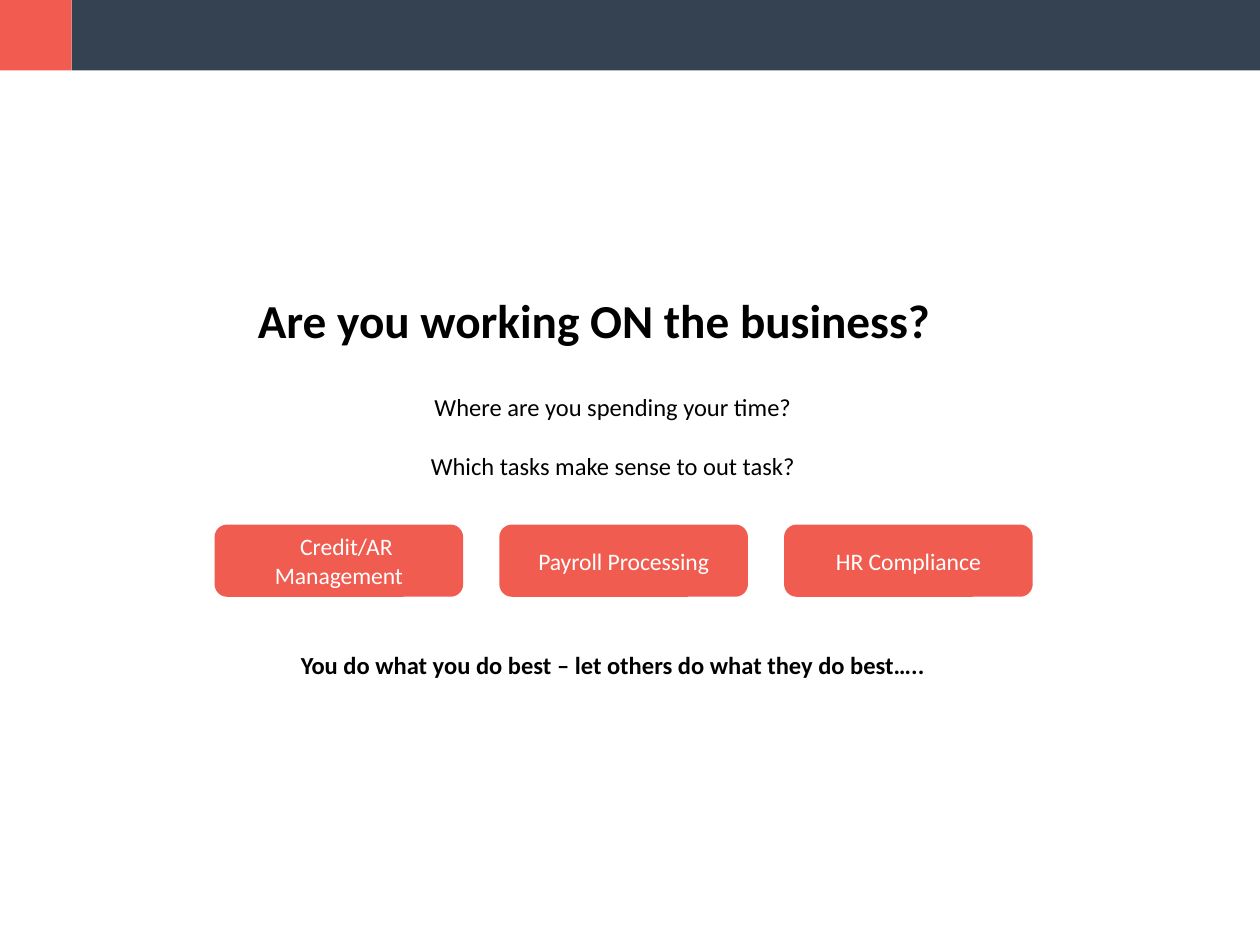
from dataclasses import dataclass

from pptx import Presentation
from pptx.dml.color import RGBColor
from pptx.enum.shapes import MSO_SHAPE
from pptx.enum.text import MSO_ANCHOR, PP_ALIGN
from pptx.shapes.autoshape import Shape
from pptx.slide import Slide
from pptx.text.text import TextFrame
from pptx.util import Inches, Pt


@dataclass(frozen=True)
class Theme:
    font: str = "Calibri"
    accent: RGBColor = RGBColor(0xF1, 0x5B, 0x50)
    button: RGBColor = RGBColor(0xF1, 0x5C, 0x50)
    band: RGBColor = RGBColor(0x35, 0x42, 0x52)
    dark: RGBColor = RGBColor(0, 0, 0)
    light: RGBColor = RGBColor(0xFF, 0xFF, 0xFF)
    title_size: float = 27
    body_size: float = 14
    button_size: float = 13.5


@dataclass(frozen=True)
class Box:
    left: float
    top: float
    width: float
    height: float


@dataclass(frozen=True)
class Line:
    text: str
    size: float
    color: RGBColor
    bold: bool = False
    before: float = 0
    spacing: float = 1.0
    indent: float = 0


THEME = Theme()
BAND_HEIGHT = 0.56
ACCENT_WIDTH = 0.57
BUTTON = Box(1.71, 4.17, 1.96, 0.56)
BUTTON_PITCH = 2.26


def add_lines(tf: TextFrame, lines: list[Line]) -> None:
    tf.word_wrap = True
    for i, line in enumerate(lines):
        p = tf.add_paragraph() if i else tf.paragraphs[0]
        p.alignment = PP_ALIGN.CENTER
        p.line_spacing = line.spacing
        if i:
            p.space_before = Pt(line.before)
        if line.indent:
            pPr = p._p.get_or_add_pPr()
            pPr.set("marL", "0")
            pPr.set("indent", str(Inches(line.indent)))
        r = p.add_run()
        r.text = line.text
        r.font.name = THEME.font
        r.font.size = Pt(line.size)
        r.font.bold = line.bold
        r.font.color.rgb = line.color


def add_text(s: Slide, box: Box, lines: list[Line]) -> TextFrame:
    sp = s.shapes.add_textbox(Inches(box.left), Inches(box.top),
                              Inches(box.width), Inches(box.height))
    add_lines(sp.text_frame, lines)
    return sp.text_frame


def add_block(s: Slide, kind: MSO_SHAPE, box: Box, color: RGBColor) -> Shape:
    """Add a plain filled shape without outline or shadow."""
    sp = s.shapes.add_shape(kind, Inches(box.left), Inches(box.top),
                            Inches(box.width), Inches(box.height))
    sp.shadow.inherit = False
    sp.fill.solid()
    sp.fill.fore_color.rgb = color
    sp.line.fill.background()
    return sp


def add_button(s: Slide, column: int, text: str, indent: float) -> None:
    box = Box(BUTTON.left + column * BUTTON_PITCH, BUTTON.top,
              BUTTON.width, BUTTON.height)
    sp = add_block(s, MSO_SHAPE.ROUNDED_RECTANGLE, box, THEME.button)
    sp.line.color.rgb = THEME.button
    sp.line.width = Pt(1)
    sp.text_frame.vertical_anchor = MSO_ANCHOR.MIDDLE
    add_lines(sp.text_frame,
              [Line(text, THEME.button_size, THEME.light, indent=indent)])


def main() -> None:
    prs = Presentation()
    prs.slide_width, prs.slide_height = Inches(10), Inches(7.5)
    s = prs.slides.add_slide(prs.slide_layouts[6])

    add_block(s, MSO_SHAPE.RECTANGLE,
              Box(0, 0, ACCENT_WIDTH, BAND_HEIGHT), THEME.accent)
    add_block(s, MSO_SHAPE.RECTANGLE,
              Box(ACCENT_WIDTH, 0, 10 - ACCENT_WIDTH, BAND_HEIGHT), THEME.band)

    tf = add_text(s, Box(0.41, 1.82, 8.87, 1),
                  [Line("Are you working ON the business?", THEME.title_size,
                        THEME.dark, bold=True, spacing=0.9)])
    tf.vertical_anchor = MSO_ANCHOR.BOTTOM
    tf.margin_right = Inches(0.36)

    add_text(s, Box(0.95, 3.06, 7.83, 3.11), [
        Line("Where are you spending your time?", THEME.body_size, THEME.dark),
        Line("Which tasks make sense to out task?", THEME.body_size,
             THEME.dark, before=17),
        Line("You do what you do best – let others do what they do best…..",
             THEME.body_size, THEME.dark, bold=True, before=97),
    ])

    buttons = [("Credit/AR Management", 0.12), ("Payroll Processing", 0),
               ("HR Compliance", 0)]
    for column, (text, indent) in enumerate(buttons):
        add_button(s, column, text, indent)

    prs.save("out.pptx")


if __name__ == "__main__":
    main()
